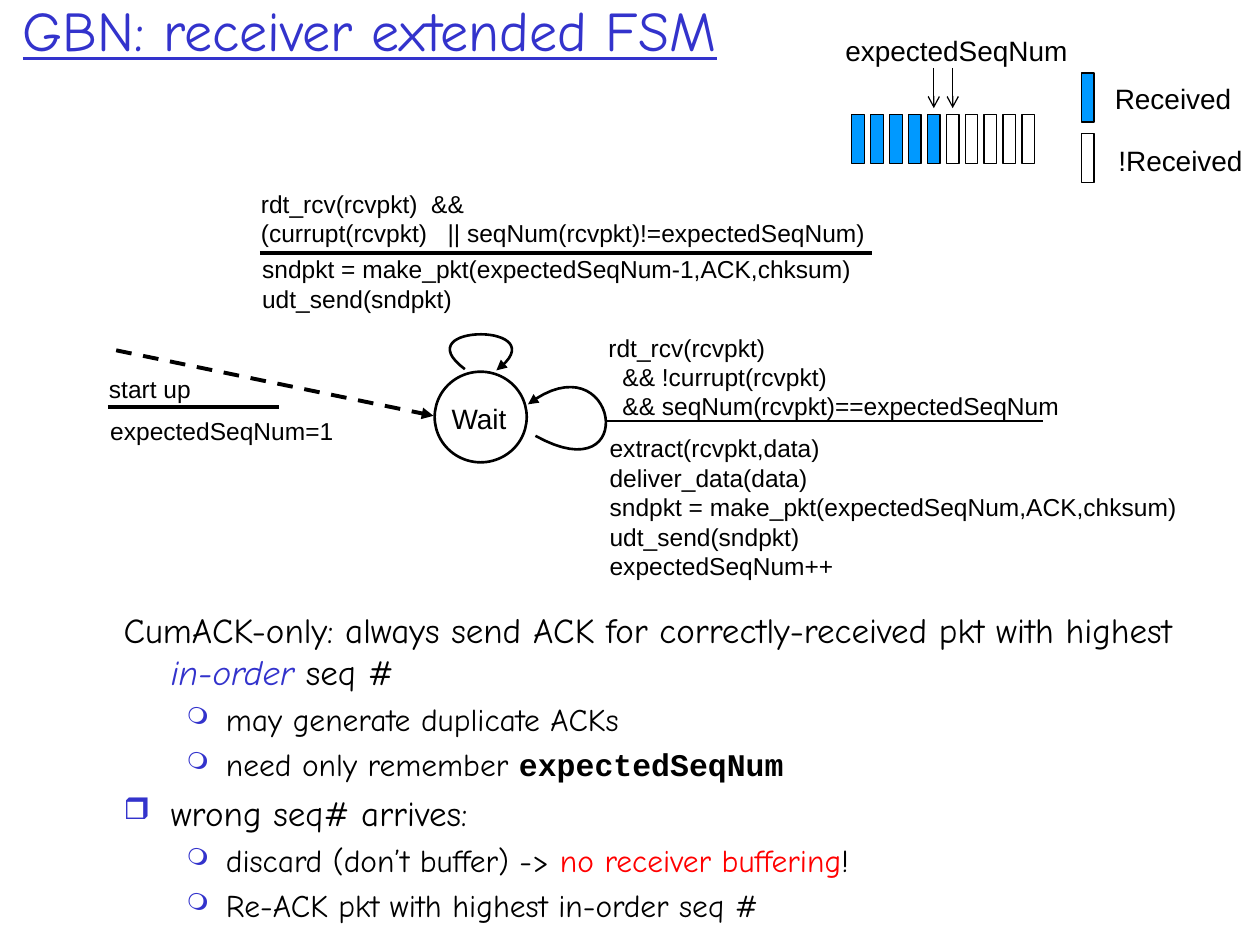
from lxml.etree import SubElement
from pptx import Presentation
from pptx.dml.color import RGBColor
from pptx.enum.dml import MSO_LINE
from pptx.enum.shapes import MSO_CONNECTOR, MSO_SHAPE
from pptx.enum.text import MSO_ANCHOR, PP_ALIGN
from pptx.oxml.ns import qn
from pptx.util import Pt

BLACK, WHITE, BLUE, RED, RECEIVED = "000000", "FFFFFF", "3333CC", "FF0000", "0099FF"
LABEL = {"name": "Arial", "size": Pt(16)}
CODE = {"name": "Arial", "size": Pt(14)}
TITLE = {"name": "Comic Neue", "size": Pt(32), "underline": True}
POINT = {"name": "Comic Neue", "size": Pt(20)}
SUBPOINT = {"name": "Comic Neue", "size": Pt(18)}
BAR_SIZE = (7.2, 28)


def color(value):
    return RGBColor.from_string(value)


def apply(target, formats):
    for attribute, value in formats.items():
        setattr(target, attribute, value)


def add_run(paragraph, text, formats, ink=BLACK):
    run = paragraph.add_run()
    run.text = text
    apply(run.font, formats)
    run.font.color.rgb = color(ink)


def add_frame(slide, box, **formats):
    frame = slide.shapes.add_textbox(*map(Pt, box)).text_frame
    apply(frame, {"word_wrap": True, **formats})
    return frame


def add_lines(slide, box, lines, formats, ink=BLACK, align=PP_ALIGN.LEFT, **frame_formats):
    frame = add_frame(slide, box, **frame_formats)
    for index, line in enumerate(lines):
        paragraph = frame.paragraphs[0] if index == 0 else frame.add_paragraph()
        paragraph.alignment = align
        if line.startswith("&&"):
            paragraph._p.get_or_add_pPr().set("marL", str(Pt(8)))
        add_run(paragraph, line, formats, ink)


def style_line(outline, weight, head=None):
    outline.color.rgb = color(BLACK)
    outline.width = Pt(weight)
    if head:
        SubElement(outline._get_or_add_ln(), qn("a:tailEnd"), type=head)


def add_rule(slide, start, end, weight, head=None, dash=None):
    rule = slide.shapes.add_connector(MSO_CONNECTOR.STRAIGHT, *map(Pt, start + end))
    SubElement(rule._element.spPr, qn("a:effectLst"))
    if dash:
        rule.line.dash_style = dash
    style_line(rule.line, weight, head)


def add_solid(slide, kind, box, fill, weight):
    solid = slide.shapes.add_shape(kind, *map(Pt, box))
    solid.shadow.inherit = False
    solid.fill.solid()
    solid.fill.fore_color.rgb = color(fill)
    style_line(solid.line, weight)


def add_loop(slide, controls, steps=32):
    def locate(t):
        weights = ((1 - t) ** 3, 3 * t * (1 - t) ** 2, 3 * t * t * (1 - t), t ** 3)
        return tuple(Pt(sum(w * c[axis] for w, c in zip(weights, controls))) for axis in (0, 1))

    curve = [locate(step / steps) for step in range(steps + 1)]
    builder = slide.shapes.build_freeform(*curve[0])
    builder.add_line_segments(curve[1:], close=False)
    loop = builder.convert_to_shape()
    loop.shadow.inherit = False
    loop.fill.background()
    style_line(loop.line, 1.5, "triangle")


def draw_packet_window(slide, box):
    left, top, width, height = box
    add_lines(slide, (left, top, width, 27), ["expectedSeqNum"], LABEL, word_wrap=False)
    pitch, received_count = 10.8, 5
    for index in range(10):
        fill = RECEIVED if index < received_count else WHITE
        bar_box = (left + pitch * (index + 1), top + height - BAR_SIZE[1], *BAR_SIZE)
        add_solid(slide, MSO_SHAPE.RECTANGLE, bar_box, fill, 0.75)
    for index in (received_count - 1, received_count):
        x = left + pitch * (index + 1) + BAR_SIZE[0] / 2
        add_rule(slide, (x, top + 23), (x, top + 46), 0.75, "arrow")


def draw_legend(slide, box):
    left, top, width, height = box
    for row, (label, fill) in enumerate((("Received", RECEIVED), ("!Received", WHITE))):
        y = top + row * height / 2
        add_solid(slide, MSO_SHAPE.RECTANGLE, (left, y, *BAR_SIZE), fill, 0.75)
        label_box = (left + 12 + 2 * row, y + 1 + row, width - 12, 27)
        add_lines(slide, label_box, [label], LABEL, word_wrap=False)


def draw_transition(slide, box, condition, action, rule_width, rule_drop, action_drop, weight):
    left, top, width, height = box
    rule_y = top + rule_drop
    add_lines(slide, (left, top, width, rule_drop), condition, CODE)
    add_rule(slide, (left + 6.5, rule_y), (left + 6.5 + rule_width, rule_y), weight)
    action_box = (left + 0.7, top + action_drop, width, height - action_drop)
    add_lines(slide, action_box, action, CODE)


def draw_wait_state(slide, box):
    left, top, width, height = box
    add_solid(slide, MSO_SHAPE.OVAL, box, WHITE, 1.5)
    label_box = (left - 6.5, top + 13.7, width + 11, 19)
    add_lines(slide, label_box, ["Wait"], LABEL, align=PP_ALIGN.CENTER)
    loops = (
        ((57.6, 36.7), (118.8, 70.6), (104.4, -20.2), (53.3, 18.7)),
        ((17.3, -1.4), (-18.7, -28.1), (72, -28.1), (35.3, -0.7)),
    )
    for controls in loops:
        add_loop(slide, [(left + x, top + y) for x, y in controls])
    add_rule(slide, (left - 182, top - 12.2), (left - 0.7, top + 25.2), 2.25, "triangle", MSO_LINE.DASH)


def draw_notes(slide, box, notes):
    frame = add_frame(slide, box)
    for index, (level, bullet, runs) in enumerate(notes):
        paragraph = frame.paragraphs[0] if index == 0 else frame.add_paragraph()
        margin, indent, base, gap, scale = (
            (58.5, -22.5, SUBPOINT, 4.3, 75000) if level else (27, -27, POINT, 4.8, 85000)
        )
        apply(paragraph, {"level": level, "space_before": Pt(gap)})
        properties = paragraph._p.get_or_add_pPr()
        properties.set("marL", str(Pt(margin)))
        properties.set("indent", str(Pt(indent)))
        if bullet:
            SubElement(SubElement(properties, qn("a:buClr")), qn("a:srgbClr"), val=BLUE)
            SubElement(properties, qn("a:buSzPct"), val=str(scale))
            SubElement(properties, qn("a:buChar"), char=bullet)
        for text, ink, extra in runs:
            add_run(paragraph, text, {**base, **extra}, ink)


def main():
    deck = Presentation()
    apply(deck, {"slide_width": Pt(720), "slide_height": Pt(540)})
    slide = deck.slides.add_slide(deck.slide_layouts[6])
    add_lines(slide, (6, -5, 612, 43), ["GBN: receiver extended FSM"], TITLE, BLUE,
              vertical_anchor=MSO_ANCHOR.MIDDLE)
    draw_notes(slide, (63.5, 344, 641.5, 225), [
        (0, None, [("CumACK-only: always send ACK for correctly-received pkt with highest ", BLACK, {}),
                   ("in-order ", BLUE, {"italic": True}), ("seq #", BLACK, {})]),
        (1, "❍", [("may generate duplicate ACKs", BLACK, {})]),
        (1, "❍", [("need only remember ", BLACK, {}),
                  ("expectedSeqNum", BLACK, {"name": "Courier New", "bold": True})]),
        (0, "❒", [("wrong seq# arrives:", BLACK, {})]),
        (1, "❍", [("discard (don’t buffer) -> ", BLACK, {}),
                  ("no receiver buffering", RED, {}), ("!", BLACK, {})]),
        (1, "❍", [("Re-ACK pkt with highest in-order seq #", BLACK, {})]),
    ])
    draw_wait_state(slide, (248.4, 212.4, 52.6, 51.8))
    draw_transition(
        slide, (142, 104.4, 387, 76.3),
        ["rdt_rcv(rcvpkt)  &&", "(currupt(rcvpkt)   || seqNum(rcvpkt)!=expectedSeqNum)"],
        ["sndpkt = make_pkt(expectedSeqNum-1,ACK,chksum)", "udt_send(sndpkt)"],
        350, 40.3, 37.4, 2.25)
    draw_transition(
        slide, (340.6, 186.5, 340, 125.3),
        ["rdt_rcv(rcvpkt)", "&& !currupt(rcvpkt)", "&& seqNum(rcvpkt)==expectedSeqNum"],
        ["extract(rcvpkt,data)", "deliver_data(data)",
         "sndpkt = make_pkt(expectedSeqNum,ACK,chksum)", "udt_send(sndpkt)", "expectedSeqNum++"],
        249, 54, 57.6, 1.5)
    draw_transition(slide, (55.2, 210.2, 148, 48.3), ["start up"], ["expectedSeqNum=1"],
                    97.5, 22.4, 23.8, 2.25)
    draw_packet_window(slide, (476, 15.8, 142.5, 77.8))
    draw_legend(slide, (618, 41.8, 98, 69))
    deck.save("out.pptx")


if __name__ == "__main__":
    main()
